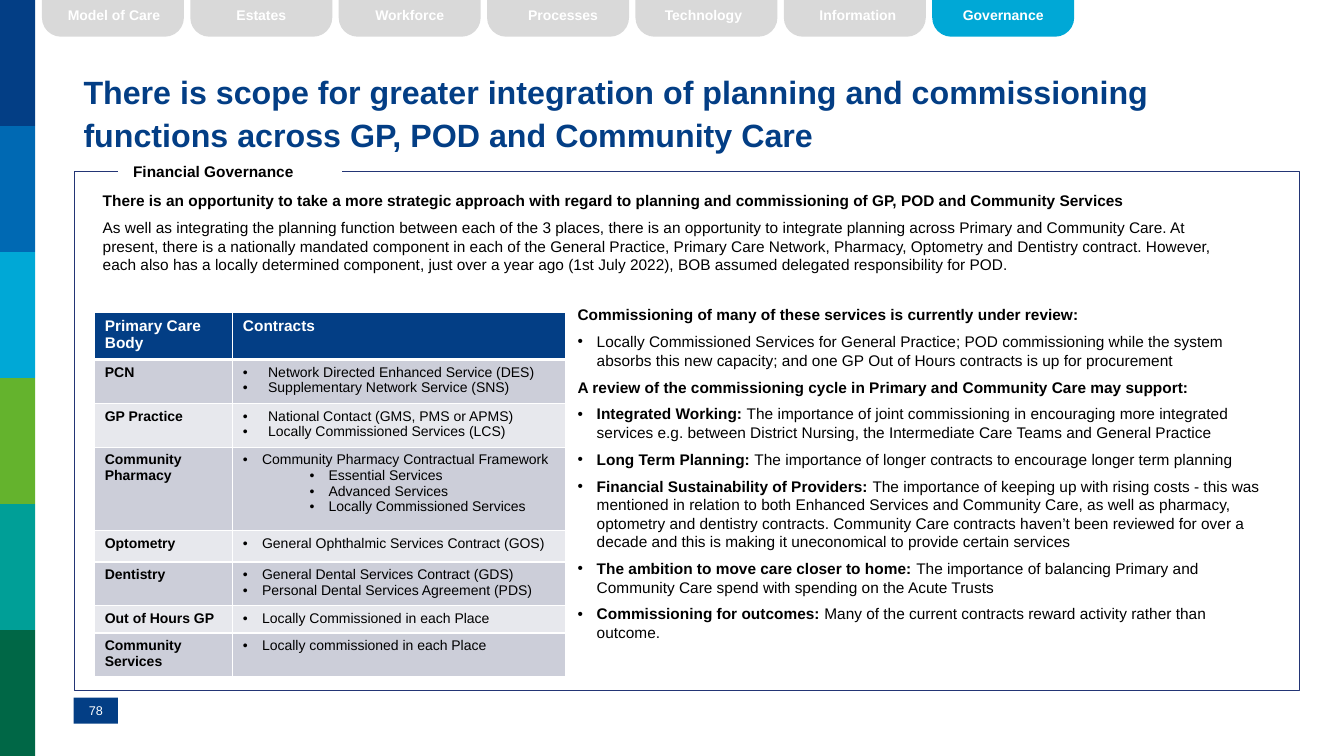
from dataclasses import dataclass

from lxml import etree
from pptx import Presentation, util as u
from pptx.dml.color import RGBColor
from pptx.enum import shapes, text
from pptx.oxml import ns


@dataclass(frozen=True)
class Theme:
    font: str = "Arial"
    navy: str = "033E85"
    cyan: str = "00A8D6"
    grey: str = "D9D9D9"
    frame: str = "233575"
    white: str = "FFFFFF"
    black: str = "000000"
    strip: tuple = ("033E85", "0069B3", "00A8D6", "64B32D", "009F97", "006746")
    bands: tuple = ("CCCED9", "E7E8ED")
    title_size: float = 23
    body_size: float = 11
    table_size: float = 10
    page_size: float = 9


theme = Theme()


def add_box(kind, left, top, width, height, fill, line=None, weight=1):
    box = slide.shapes.add_shape(kind, u.Inches(left), u.Inches(top), u.Inches(width), u.Inches(height))
    box.shadow.inherit = False
    box.fill.solid()
    box.fill.fore_color.rgb = RGBColor.from_string(fill)
    if line:
        box.line.color.rgb = RGBColor.from_string(line)
        box.line.width = u.Pt(weight)
    else:
        box.line.fill.background()
    return box


def write(frame, index, lead="", body="", size=theme.body_size, colour=theme.black,
          indent=0, hanging=0.19, after=0, align=text.PP_ALIGN.LEFT):
    """Fill paragraph `index` with a bold lead and a regular body; an indent adds a bullet."""
    frame.word_wrap = True
    para = frame.paragraphs[0] if index == 0 else frame.add_paragraph()
    if indent:
        props = para._p.get_or_add_pPr()
        props.set("marL", str(u.Inches(indent)))
        props.set("indent", str(-u.Inches(hanging)))
        etree.SubElement(props, ns.qn("a:buFont")).set("typeface", theme.font)
        etree.SubElement(props, ns.qn("a:buChar")).set("char", "•")
    para.alignment = align
    para.space_after = u.Pt(after)
    for words, bold in ((lead, True), (body, False)):
        if words:
            span = para.add_run()
            span.text = words
            span.font.name = theme.font
            span.font.size = u.Pt(size)
            span.font.bold = bold
            span.font.color.rgb = RGBColor.from_string(colour)
    return para


deck = Presentation()
deck.slide_width, deck.slide_height = u.Inches(13.33), u.Inches(7.5)
slide = deck.slides.add_slide(deck.slide_layouts[6])
rectangle = shapes.MSO_SHAPE.RECTANGLE
centre = text.PP_ALIGN.CENTER

# Colour strip and page number
for row, colour in enumerate(theme.strip):
    add_box(rectangle, 0, row * 1.25, 0.35, 1.25, colour)

page_box = add_box(rectangle, 0.73, 6.92, 0.44, 0.26, theme.navy)
write(page_box.text_frame, 0, body="78", size=theme.page_size, colour=theme.white, align=centre)
page_box.text_frame.margin_left = page_box.text_frame.margin_right = 0

# Title
title = slide.shapes.add_textbox(u.Inches(0.73), u.Inches(0.65), u.Inches(11.89), u.Inches(0.85)).text_frame
title.margin_top = u.Inches(0.02)
title_para = write(
    title, 0, "There is scope for greater integration of planning and commissioning "
    "functions across GP, POD and Community Care", size=theme.title_size, colour=theme.navy)
title_para.line_spacing = u.Pt(30.7)

# Framed section
add_box(rectangle, 0.74, 1.7, 12.15, 5.15, theme.white, theme.frame)
section_label = add_box(rectangle, 1.18, 1.58, 2.2, 0.24, theme.white, theme.white, 2)
write(section_label.text_frame, 0, "Financial Governance")
section_label.text_frame.margin_left = u.Inches(0.14)

intro = slide.shapes.add_textbox(u.Inches(0.92), u.Inches(1.85), u.Inches(11.52), u.Inches(0.93)).text_frame
write(intro, 0, "There is an opportunity to take a more strategic approach with regard to planning and "
      "commissioning of GP, POD and Community Services", after=6)
write(intro, 1, body="As well as integrating the planning function between each of the 3 places, there is an "
      "opportunity to integrate planning across Primary and Community Care. At present, there is a nationally "
      "mandated component in each of the General Practice, Primary Care Network, Pharmacy, Optometry and "
      "Dentistry contract. However, each also has a locally determined component, just over a year ago "
      "(1st July 2022), BOB assumed delegated responsibility for POD.", after=6)

review_points = [
    ("Commissioning of many of these services is currently under review:", ""),
    ("", "Locally Commissioned Services for General Practice; POD commissioning while the system absorbs "
     "this new capacity; and one GP Out of Hours contracts is up for procurement"),
    ("A review of the commissioning cycle in Primary and Community Care may support:", ""),
    ("Integrated Working: ", "The importance of joint commissioning in encouraging more integrated services "
     "e.g. between District Nursing, the Intermediate Care Teams and General Practice"),
    ("Long Term Planning: ", "The importance of longer contracts to encourage longer term planning"),
    ("Financial Sustainability of Providers: ", "The importance of keeping up with rising costs - this was "
     "mentioned in relation to both Enhanced Services and Community Care, as well as pharmacy, optometry and "
     "dentistry contracts. Community Care contracts haven’t been reviewed for over a decade and this is "
     "making it uneconomical to provide certain services"),
    ("The ambition to move care closer to home: ", "The importance of balancing Primary and Community Care "
     "spend with spending on the Acute Trusts"),
    ("Commissioning for outcomes: ", "Many of the current contracts reward activity rather than outcome."),
]
review = slide.shapes.add_textbox(u.Inches(5.63), u.Inches(2.98), u.Inches(6.99), u.Inches(3.47)).text_frame
for index, (lead, body) in enumerate(review_points):
    write(review, index, lead, body, indent=0.19 if body else 0, after=6)

# Contracts table: row height, body, bullet indent, contracts, nested contracts
contract_rows = [
    (0.43, "PCN", 0.25, ["Network Directed Enhanced Service (DES)", "Supplementary Network Service (SNS)"], []),
    (0.43, "GP Practice", 0.25,
     ["National Contact (GMS, PMS or APMS)", "Locally Commissioned Services (LCS)"], []),
    (0.83, "Community Pharmacy", 0.19, ["Community Pharmacy Contractual Framework"],
     ["Essential Services", "Advanced Services", "Locally Commissioned Services"]),
    (0.31, "Optometry", 0.19, ["General Ophthalmic Services Contract (GOS)"], []),
    (0.43, "Dentistry", 0.19,
     ["General Dental Services Contract (GDS)", "Personal Dental Services Agreement (PDS)"], []),
    (0.27, "Out of Hours GP", 0.19, ["Locally Commissioned in each Place"], []),
    (0.43, "Community Services", 0.19, ["Locally commissioned in each Place"], []),
]
table = slide.shapes.add_table(len(contract_rows) + 1, 2, u.Inches(0.94), u.Inches(3.1),
                               u.Inches(4.67), u.Inches(3.59)).table
table.horz_banding = False
table.columns[0].width, table.columns[1].width = u.Inches(1.37), u.Inches(3.3)
table.rows[0].height = u.Inches(0.46)
for column, heading in enumerate(("Primary Care Body", "Contracts")):
    write(table.cell(0, column).text_frame, 0, heading, colour=theme.white)

for row, (height, care_body, indent, contracts, nested) in enumerate(contract_rows, 1):
    table.rows[row].height = u.Inches(height)
    write(table.cell(row, 0).text_frame, 0, care_body, size=theme.table_size)
    frame = table.cell(row, 1).text_frame
    for index, contract in enumerate(contracts + nested):
        is_nested = index >= len(contracts)
        para = write(frame, index, body=contract, size=theme.table_size,
                     indent=0.85 if is_nested else indent, hanging=0.19 if is_nested else indent)
        para.level = int(is_nested)

for row in range(len(table.rows)):
    for column in range(2):
        cell = table.cell(row, column)
        props = cell._tc.get_or_add_tcPr()
        for side in ("lnL", "lnR", "lnT", "lnB"):
            under_heading = (row, side) in ((0, "lnB"), (1, "lnT"))
            edge = etree.SubElement(props, ns.qn(f"a:{side}"), w=str(u.Pt(3 if under_heading else 1)))
            paint = etree.SubElement(edge, ns.qn("a:solidFill"))
            etree.SubElement(paint, ns.qn("a:srgbClr"), val=theme.white)
        cell.fill.solid()
        cell.fill.fore_color.rgb = RGBColor.from_string(theme.bands[(row - 1) % 2] if row else theme.navy)

# Navigation tabs, each with a small sideways shift of its label
tabs = [("Model of Care", 0.01), ("Estates", 0), ("Workforce", 0), ("Processes", 0.05),
        ("Technology", -0.03), ("Information", 0.03), ("Governance", 0)]
for index, (label, shift) in enumerate(tabs):
    colour = theme.cyan if label == "Governance" else theme.grey
    tab = add_box(shapes.MSO_SHAPE.ROUND_2_SAME_RECTANGLE, 0.43 + index * 8.83 / 6, 0, 1.38, 0.35,
                  colour, colour, 2)
    tab.adjustments[0], tab.adjustments[1] = 0, 0.5
    frame = tab.text_frame
    write(frame, 0, label, size=theme.table_size, colour=theme.white, align=centre)
    frame.margin_left, frame.margin_right = u.Inches(0.05 + shift), u.Inches(0.05 - shift)
    frame.margin_top = frame.margin_bottom = 0

deck.save("out.pptx")
